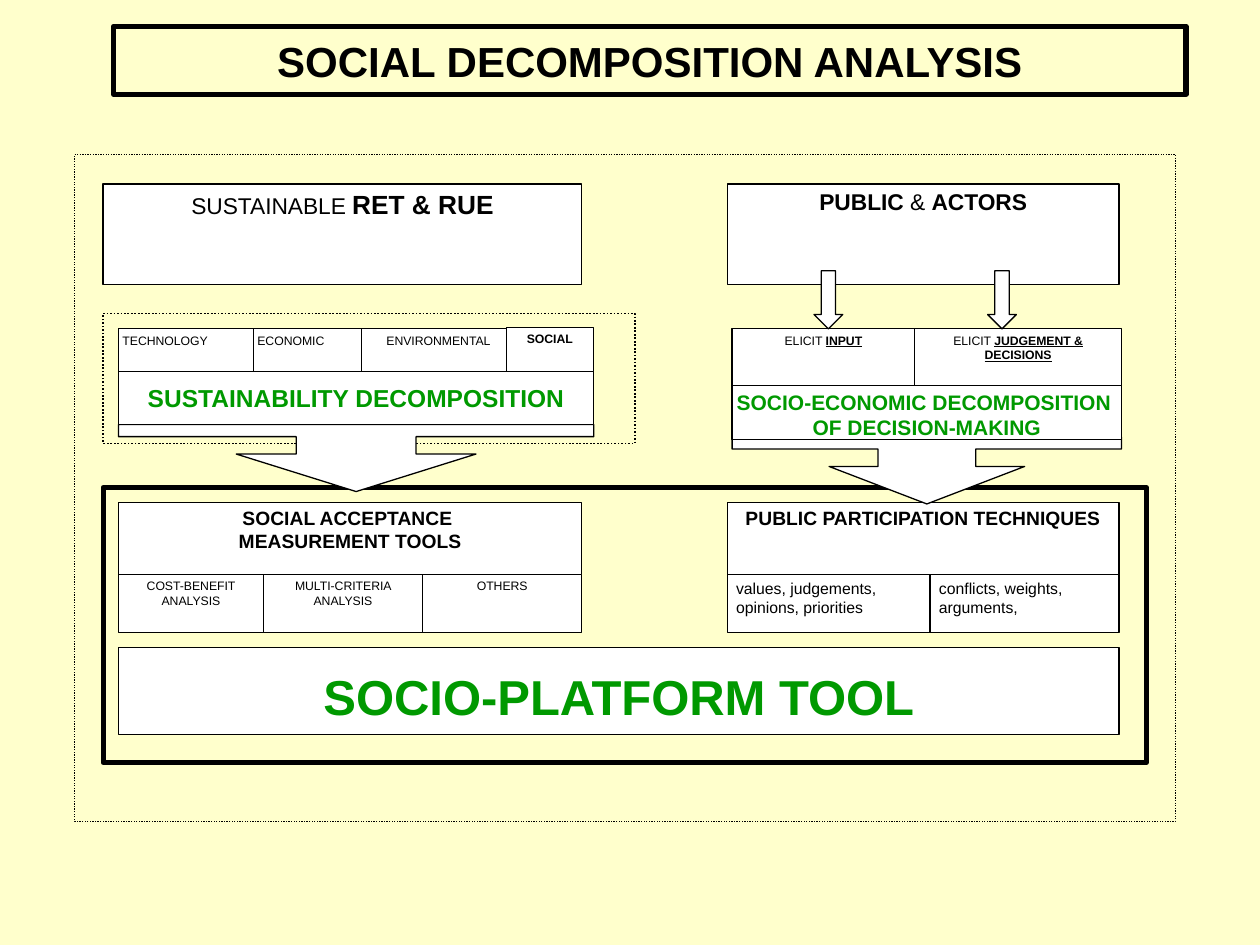
from dataclasses import dataclass
from itertools import pairwise

from pptx import Presentation
from pptx import util as u
from pptx.dml import color
from pptx.enum import dml, shapes, text


@dataclass(frozen=True)
class Theme:
    font: str = "Arial"
    paper: str = "FFFFCC"
    white: str = "FFFFFF"
    ink: str = "000000"
    green: str = "009900"
    title: int = 24
    platform: int = 28
    result: int = 14
    strong: int = 15
    topic: int = 13
    decision: int = 12
    heading: int = 11
    note: int = 9
    small: int = 7
    thin: float = 0.75
    medium: float = 1
    thick: float = 3


THEME = Theme()
SHAPE = shapes.MSO_SHAPE
ALIGN = text.PP_ALIGN
NORMAL = (0.18, 0.08, 0.18, 0.08)
TIGHT = (0.08, 0.08, 0.08, 0.08)
BOLD = {"bold": True}
MARKED = {"bold": True, "underline": True}


def set_all(target, values):
    for name, value in values.items():
        setattr(target, name, value)


def add_shape(parent, place, kind=SHAPE.RECTANGLE, fill=THEME.white,
              width=THEME.thin, dotted=False, adjust=()):
    box = parent.shapes.add_shape(kind, *map(u.Cm, place))
    box.shadow.inherit = False
    if fill:
        box.fill.solid()
        box.fill.fore_color.rgb = color.RGBColor.from_string(fill)
    else:
        box.fill.background()
    box.line.color.rgb = color.RGBColor.from_string(THEME.ink)
    box.line.width = u.Pt(width)
    if dotted:
        box.line.dash_style = dml.MSO_LINE.ROUND_DOT
    for index, value in enumerate(adjust):
        box.adjustments[index] = value
    return box


def write(box, lines, size, ink=THEME.ink, align=ALIGN.CENTER,
          insets=NORMAL, anchor=text.MSO_ANCHOR.TOP):
    frame = box.text_frame
    sides = ("margin_left", "margin_top", "margin_right", "margin_bottom")
    set_all(frame, dict(zip(sides, map(u.Cm, insets))))
    set_all(frame, {"word_wrap": True, "vertical_anchor": anchor})
    for index, line in enumerate(lines):
        para = frame.add_paragraph() if index else frame.paragraphs[0]
        para.alignment = align
        for words, style in line:
            span = para.add_run()
            span.text = words
            set_all(span.font, {"name": THEME.font, "size": u.Pt(size),
                                "bold": False, **style})
            span.font.color.rgb = color.RGBColor.from_string(ink)


def add_row(parent, edges, top, height, cells, size):
    for (left, right), (line, style) in zip(pairwise(edges), cells):
        box = add_shape(parent, (left, top, right - left, height))
        write(box, [line], size, **style)


def add_sources(diagram):
    box = add_shape(diagram, (2.08, 3.71, 9.65, 2.03))
    strong = {"bold": True, "size": u.Pt(THEME.strong)}
    write(box, [[("SUSTAINABLE ", {}), ("RET & RUE", strong)]], THEME.topic)
    box = add_shape(diagram, (14.66, 3.71, 7.9, 2.03))
    write(box, [[("PUBLIC", BOLD), (" & ", {}), ("ACTORS", BOLD)]], THEME.topic)


def add_criteria(diagram):
    left = {"align": ALIGN.LEFT, "insets": TIGHT}
    add_row(diagram, (2.39, 5.11, 7.29, 10.21), 6.63, 0.89, [
        ([("TECHNOLOGY", {})], left),
        ([("ECONOMIC", {})], left),
        ([("ENVIRONMENTAL", {})], {"insets": (0.21, 0.08, 0.03, 0.08)}),
    ], THEME.small)
    add_row(diagram, (10.21, 11.96), 6.6, 0.91,
            [([("SOCIAL", BOLD)], {"insets": TIGHT})], THEME.small)
    add_row(diagram, (14.76, 18.44, 22.61), 6.63, 1.18, [
        ([("ELICIT ", {}), ("INPUT", MARKED)], {}),
        ([("ELICIT ", {}), ("JUDGEMENT & DECISIONS", MARKED)], {}),
    ], THEME.small)


def add_tools(diagram):
    box = add_shape(diagram, (14.66, 10.13, 7.9, 1.45))
    write(box, [[("PUBLIC PARTICIPATION TECHNIQUES", BOLD)]], THEME.heading)
    box = add_shape(diagram, (2.39, 10.13, 9.34, 1.47))
    write(box, [[("SOCIAL ACCEPTANCE ", BOLD)], [("MEASUREMENT TOOLS", BOLD)]],
          THEME.heading)
    add_row(diagram, (2.39, 5.31, 8.52, 11.73), 11.58, 1.17, [
        ([("COST-BENEFIT ANALYSIS", {})], {}),
        ([("MULTI-CRITERIA ANALYSIS", {})], {"insets": TIGHT}),
        ([("OTHERS", {})], {"insets": TIGHT}),
    ], THEME.small)
    left = {"align": ALIGN.LEFT}
    add_row(diagram, (14.66, 18.75, 22.56), 11.58, 1.17, [
        ([("values, judgements, opinions, priorities", {})], left),
        ([("conflicts, weights, arguments,", {})], left),
    ], THEME.note)
    box = add_shape(diagram, (2.39, 13.06, 20.17, 1.75))
    write(box, [[("SOCIO-PLATFORM TOOL", BOLD)]], THEME.platform, THEME.green,
          insets=(0.18, 0.38, 0.18, 0.23))


def add_flow(diagram):
    for left in (16.41, 19.91):
        add_shape(diagram, (left, 5.46, 0.58, 1.17), SHAPE.DOWN_ARROW,
                  adjust=(0.5, 0.5))
    callout = SHAPE.DOWN_ARROW_CALLOUT
    add_shape(diagram, (14.76, 8.81, 7.85, 1.35), callout,
              adjust=(1.46, 1.46, 0.56, 0.18))
    add_shape(diagram, (2.39, 8.56, 9.58, 1.35), callout,
              adjust=(1.79, 1.79, 0.56, 0.18))
    box = add_shape(diagram, (2.39, 7.49, 9.58, 1.07))
    write(box, [[("SUSTAINABILITY DECOMPOSITION", BOLD)]], THEME.result,
          THEME.green, insets=(0.08, 0.23, 0.08, 0.08))
    box = add_shape(diagram, (14.76, 7.77, 7.85, 1.09))
    write(box, [[("SOCIO-ECONOMIC DECOMPOSITION ", BOLD)],
                [("OF DECISION-MAKING", BOLD)]],
          THEME.decision, THEME.green, insets=TIGHT)


def main():
    deck = Presentation()
    set_all(deck, {"slide_width": u.Cm(25.4), "slide_height": u.Cm(19.05)})
    page = deck.slides.add_slide(deck.slide_layouts[6])
    page.background.fill.solid()
    page.background.fill.fore_color.rgb = color.RGBColor.from_string(THEME.paper)

    title = add_shape(page, (2.29, 0.53, 21.62, 1.37), fill=None,
                      width=THEME.thick)
    write(title, [[("SOCIAL DECOMPOSITION ANALYSIS", BOLD)]], THEME.title,
          anchor=text.MSO_ANCHOR.MIDDLE)

    diagram = page.shapes.add_group_shape()
    add_shape(diagram, (1.5, 3.12, 22.2, 13.44), fill=None, dotted=True)
    add_sources(diagram)
    add_criteria(diagram)
    add_tools(diagram)
    add_shape(diagram, (2.08, 9.83, 21.03, 5.54), fill=None, width=THEME.thick)
    add_shape(diagram, (2.08, 6.32, 10.72, 2.62), fill=None,
              width=THEME.medium, dotted=True)
    add_flow(diagram)
    deck.save("out.pptx")


if __name__ == "__main__":
    main()
